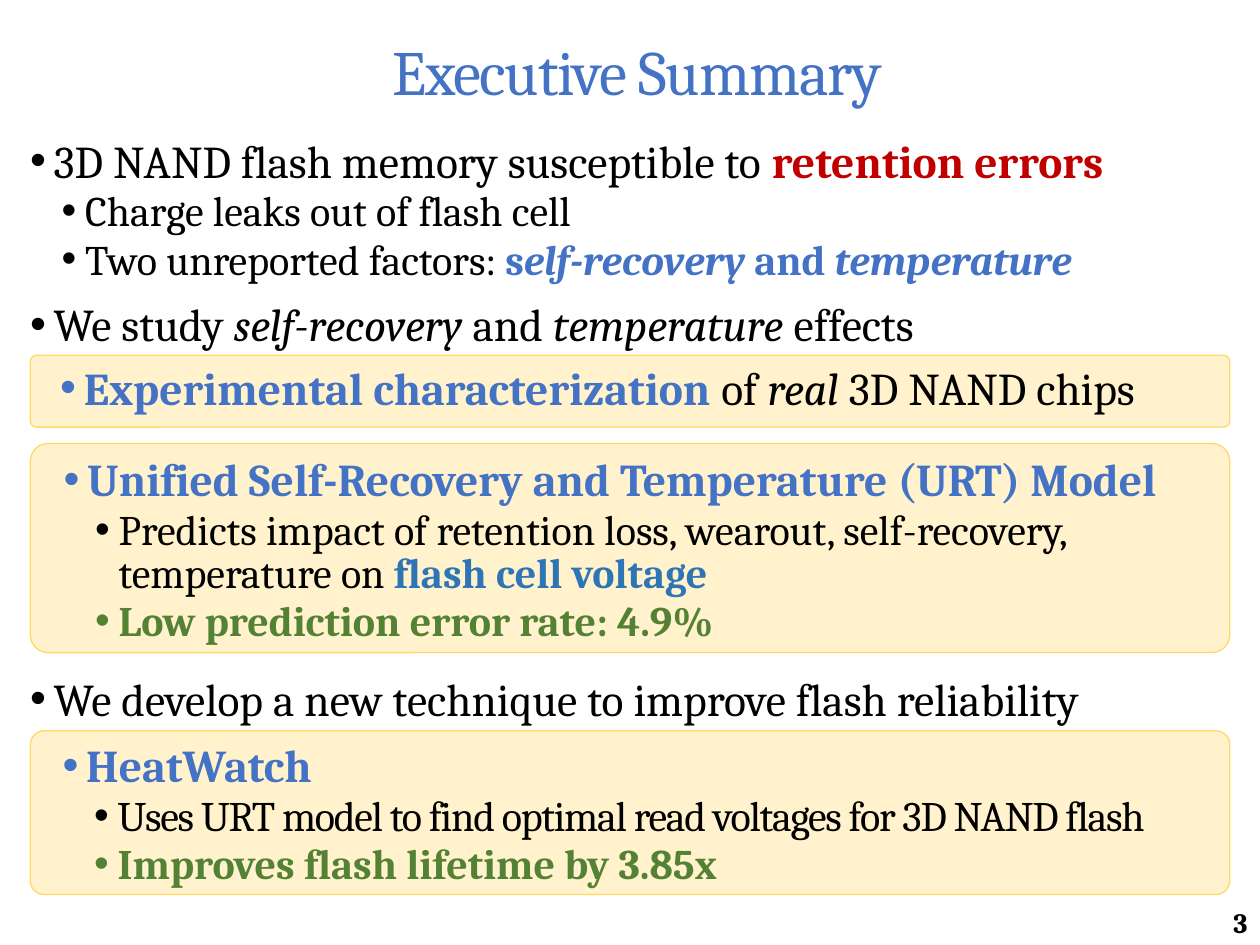
from pptx import Presentation
from pptx.dml.color import RGBColor
from pptx.enum.shapes import MSO_SHAPE
from pptx.enum.text import MSO_ANCHOR, PP_ALIGN
from pptx.oxml.ns import qn
from pptx.util import Pt
from lxml.etree import SubElement

BLACK = RGBColor(0x00, 0x00, 0x00)
BLUE = RGBColor(0x44, 0x72, 0xC4)
DEEP_BLUE = RGBColor(0x2E, 0x75, 0xB6)
RED = RGBColor(0xC0, 0x00, 0x00)
GREEN = RGBColor(0x54, 0x82, 0x35)
CREAM = RGBColor(0xFF, 0xF2, 0xCC)
GOLD = RGBColor(0xFF, 0xD9, 0x66)

FONT = "Cambria"
HANGING = 13.5
CARD_LEFT, CARD_WIDTH = 17.28, 685.44


def add_text_box(slide, left, top, width, height, anchor=MSO_ANCHOR.TOP):
    frame = slide.shapes.add_textbox(Pt(left), Pt(top), Pt(width), Pt(height)).text_frame
    frame.word_wrap = True
    frame.vertical_anchor = anchor
    return frame


def add_runs(paragraph, runs, size, spacing=0):
    paragraph.font.name = FONT
    paragraph.font.size = Pt(size)
    for text, color, style in runs:
        run = paragraph.add_run()
        run.text = text
        run.font.color.rgb = color
        run.font.bold = "b" in style
        run.font.italic = "i" in style
        if spacing:
            run._r.get_or_add_rPr().set("spc", str(round(spacing * 100)))


def add_bullets(frame, bullets):
    for index, (level, indent, size, line, before, spacing, runs) in enumerate(bullets):
        paragraph = frame.add_paragraph() if index else frame.paragraphs[0]
        paragraph.alignment = PP_ALIGN.LEFT
        paragraph.level = level
        paragraph.line_spacing = line
        paragraph.space_before = Pt(before)
        properties = paragraph._p.get_or_add_pPr()
        properties.set("marL", str(Pt(indent)))
        properties.set("indent", str(-Pt(HANGING)))
        SubElement(properties, qn("a:buFont")).set("typeface", "Arial")
        SubElement(properties, qn("a:buChar")).set("char", "•")
        add_runs(paragraph, runs, size, spacing)


def main_point(before, *runs):
    return 0, HANGING, 26, 0.85, before, 0, runs


def sub_point(*runs):
    return 1, 31.5, 24, 0.85, 3, 0, runs


def card_heading(*runs):
    return 1, 22.5, 26, 1.0, 0, 0, runs


def card_point(*runs, spacing=0):
    return 2, 40.5, 24, 0.85, 3, spacing, runs


def add_title(slide, left, top, width, height):
    paragraph = add_text_box(slide, left, top, width, height, MSO_ANCHOR.MIDDLE).paragraphs[0]
    paragraph.alignment = PP_ALIGN.CENTER
    paragraph.line_spacing = 0.9
    paragraph._p.get_or_add_pPr().set("marL", str(Pt(8)))
    add_runs(paragraph, [("Executive Summary", BLUE, "")], 36, -0.7)


def add_body(slide, left, top, width, height):
    add_bullets(add_text_box(slide, left, top, width, height), [
        main_point(6, ("3D NAND flash memory susceptible to ", BLACK, ""),
                   ("retention errors", RED, "b")),
        sub_point(("Charge leaks out of flash cell", BLACK, "")),
        sub_point(("Two unreported factors: ", BLACK, ""), ("s", BLUE, "b"),
                  ("elf-recovery ", BLUE, "bi"), ("and ", BLUE, "b"),
                  ("temperature", BLUE, "bi")),
        main_point(12, ("We study ", BLACK, ""), ("self-recovery", BLACK, "i"),
                   (" and ", BLACK, ""), ("temperature", BLACK, "i"),
                   (" effects", BLACK, "")),
        main_point(187.5, ("We develop a new technique to improve flash reliability", BLACK, "")),
    ])


def add_card(slide, left, top, width, height, bullets):
    card = slide.shapes.add_shape(
        MSO_SHAPE.ROUNDED_RECTANGLE, Pt(left), Pt(top), Pt(width), Pt(height))
    card.adjustments[0] = 0.085
    card.shadow.inherit = False
    card.fill.solid()
    card.fill.fore_color.rgb = CREAM
    card.line.color.rgb = GOLD
    card.line.width = Pt(0.75)
    frame = card.text_frame
    frame.word_wrap = True
    frame.vertical_anchor = MSO_ANCHOR.TOP
    frame.margin_left, frame.margin_right = Pt(7.2), Pt(0)
    frame.margin_top = frame.margin_bottom = Pt(1.44)
    add_bullets(frame, bullets)


def add_page_number(slide, left, top, width, height):
    paragraph = add_text_box(slide, left, top, width, height, MSO_ANCHOR.BOTTOM).paragraphs[0]
    paragraph.alignment = PP_ALIGN.RIGHT
    add_runs(paragraph, [("3", BLACK, "b")], 16)


def main():
    presentation = Presentation()
    presentation.slide_width, presentation.slide_height = Pt(720), Pt(540)
    slide = presentation.slides.add_slide(presentation.slide_layouts[6])
    add_title(slide, 0, 0, 720, 85.68)
    add_body(slide, 10.08, 77.04, 700.56, 432)
    add_page_number(slide, 645.12, 513.36, 74.88, 26.64)
    cards = [
        (203.04, 41.04, [
            card_heading(("Experimental characterization ", BLUE, "b"), ("of ", BLACK, ""),
                         ("real", BLACK, "i"), (" 3D NAND chips", BLACK, "")),
        ]),
        (253.44, 119.52, [
            card_heading(("Unified Self-Recovery and Temperature (URT) Model", BLUE, "b")),
            card_point(("Predicts impact of retention loss, wearout, self-recovery, "
                        "temperature on ", BLACK, ""), ("flash cell voltage", DEEP_BLUE, "b")),
            card_point(("Low prediction error rate: 4.9%", GREEN, "b")),
        ]),
        (417.6, 93.6, [
            card_heading(("HeatWatch", BLUE, "b")),
            card_point(("Uses URT model to find optimal read voltages for 3D NAND flash",
                        BLACK, ""), spacing=-0.7),
            card_point(("Improves flash lifetime by 3.85x", GREEN, "b")),
        ]),
    ]
    for top, height, bullets in cards:
        add_card(slide, CARD_LEFT, top, CARD_WIDTH, height, bullets)
    presentation.save("out.pptx")


if __name__ == "__main__":
    main()
